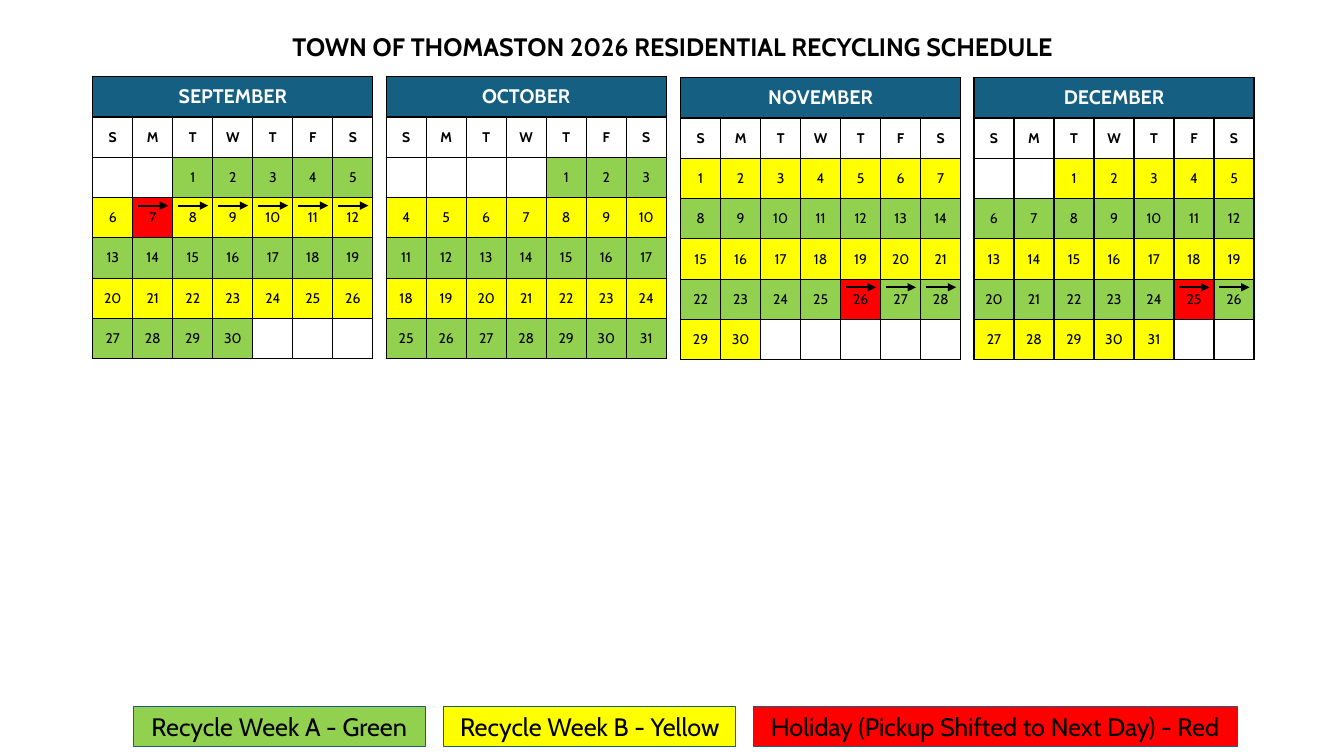
from lxml import etree
from pptx import Presentation
from pptx.dml.color import RGBColor as RGB
from pptx.enum.shapes import MSO_CONNECTOR as Line, MSO_SHAPE as Shape
from pptx.enum.text import MSO_ANCHOR as Anchor, MSO_AUTO_SIZE as Fit, PP_ALIGN as Align
from pptx.oxml import parse_xml
from pptx.oxml.ns import nsdecls, qn
from pptx.util import Inches, Pt

HUES = {"black": "000000", "white": "FFFFFF", "blue": "156082",
        "green": "92D050", "yellow": "FFFF00", "red": "FF0000"}
HUES = {name: RGB.from_string(code) for name, code in HUES.items()}
DAYS = "SMTWTFS"
WIDE, HIGH = 2.78, 0.4
COL = WIDE / len(DAYS)

# name, left, top, column of day 1, days, hues of the weeks, holiday
MONTHS = [
    ("SEPTEMBER", 0.92, 0.76, 2, 30, ("green", "yellow"), 7),
    ("OCTOBER", 3.83, 0.76, 4, 31, ("green", "yellow"), None),
    ("NOVEMBER", 6.75, 0.77, 0, 30, ("yellow", "green"), 26),
    ("DECEMBER", 9.66, 0.77, 2, 31, ("yellow", "green"), 25),
]
KEYS = [
    ("Recycle Week A - Green", 1.32, 2.9, "green"),
    ("Recycle Week B - Yellow", 4.4, 2.9, "yellow"),
    ("Holiday (Pickup Shifted to Next Day) - Red", 7.47, 4.8, "red"),
]


def write(frame, text, size=18, hue="black", bold=False):
    par = frame.paragraphs[0]
    par.alignment = Align.CENTER
    par.font.size = Pt(size)
    if text:
        run = par.add_run()
        run.text = text
        font = run.font
        font.name, font.size, font.bold = "Cabin", Pt(size), bold
        font.color.rgb = HUES[hue]


def style(cell, hue=None):
    """Give a cell black borders, centred text and a fill if it has a hue."""
    cell.vertical_anchor = Anchor.MIDDLE
    props = cell._tc.get_or_add_tcPr()
    for side in "LRTB":
        props.append(parse_xml(
            f'<a:ln{side} {nsdecls("a")} w="12700"><a:solidFill>'
            f'<a:srgbClr val="{HUES["black"]}"/></a:solidFill></a:ln{side}>'))
    if hue:
        cell.fill.solid()
        cell.fill.fore_color.rgb = HUES[hue]
    else:
        cell.fill.background()


deck = Presentation()
deck.slide_width, deck.slide_height = Inches(13.33), Inches(7.5)
slide = deck.slides.add_slide(deck.slide_layouts[6])
shapes = slide.shapes

title = shapes.add_textbox(Inches(1.38), Inches(0.26), Inches(10.58), Inches(0.4))
title.text_frame.word_wrap = True
title.text_frame.auto_size = Fit.SHAPE_TO_FIT_TEXT
write(title.text_frame, "TOWN OF THOMASTON 2026 RESIDENTIAL RECYCLING SCHEDULE", bold=True)

for text, left, wide, hue in KEYS:
    key = shapes.add_shape(Shape.RECTANGLE, Inches(left), Inches(7.01), Inches(wide), Inches(0.4))
    key.shadow.inherit = False
    key.fill.solid()
    key.fill.fore_color.rgb = HUES[hue]
    key.line.color.rgb = HUES["blue"]
    key.line.width = Pt(0.75)
    key.text_frame.word_wrap = True
    key.text_frame.auto_size = Fit.SHAPE_TO_FIT_TEXT
    write(key.text_frame, text)

shifts = []
for name, left, top, start, count, hues, holiday in MONTHS:
    table = shapes.add_table(7, len(DAYS), Inches(left), Inches(top),
                             Inches(WIDE), Inches(7 * HIGH)).table
    table.first_row = table.horz_banding = False
    for col in table.columns:
        col.width = Inches(COL)
    for row in table.rows:
        row.height = Inches(HIGH)

    for c, letter in enumerate(DAYS):
        style(table.cell(0, c), "blue")
        style(table.cell(1, c))
        write(table.cell(1, c).text_frame, letter, size=10, bold=True)
    table.cell(0, 0).merge(table.cell(0, len(DAYS) - 1))
    write(table.cell(0, 0).text_frame, name, size=14, hue="white", bold=True)

    for spot in range(5 * len(DAYS)):
        week, c = divmod(spot, len(DAYS))
        day = spot - start + 1
        shown = 1 <= day <= count
        hue = "red" if day == holiday else hues[week % 2]
        cell = table.cell(week + 2, c)
        style(cell, hue if shown else None)
        write(cell.text_frame, str(day) if shown else "", size=10)
        if holiday and week == (holiday + start - 1) // len(DAYS) and day >= holiday:
            shifts.append((left + c * COL + 0.05, top + (week + 2) * HIGH + 0.08))

for x, y in shifts:
    arrow = shapes.add_connector(Line.STRAIGHT, Inches(x), Inches(y), Inches(x + 0.3), Inches(y))
    arrow.line.color.rgb = HUES["black"]
    arrow.line.width = Pt(1.5)
    etree.SubElement(arrow.line._get_or_add_ln(), qn("a:tailEnd"), type="triangle")
    etree.SubElement(arrow._element.spPr, qn("a:effectLst"))

deck.save("out.pptx")
